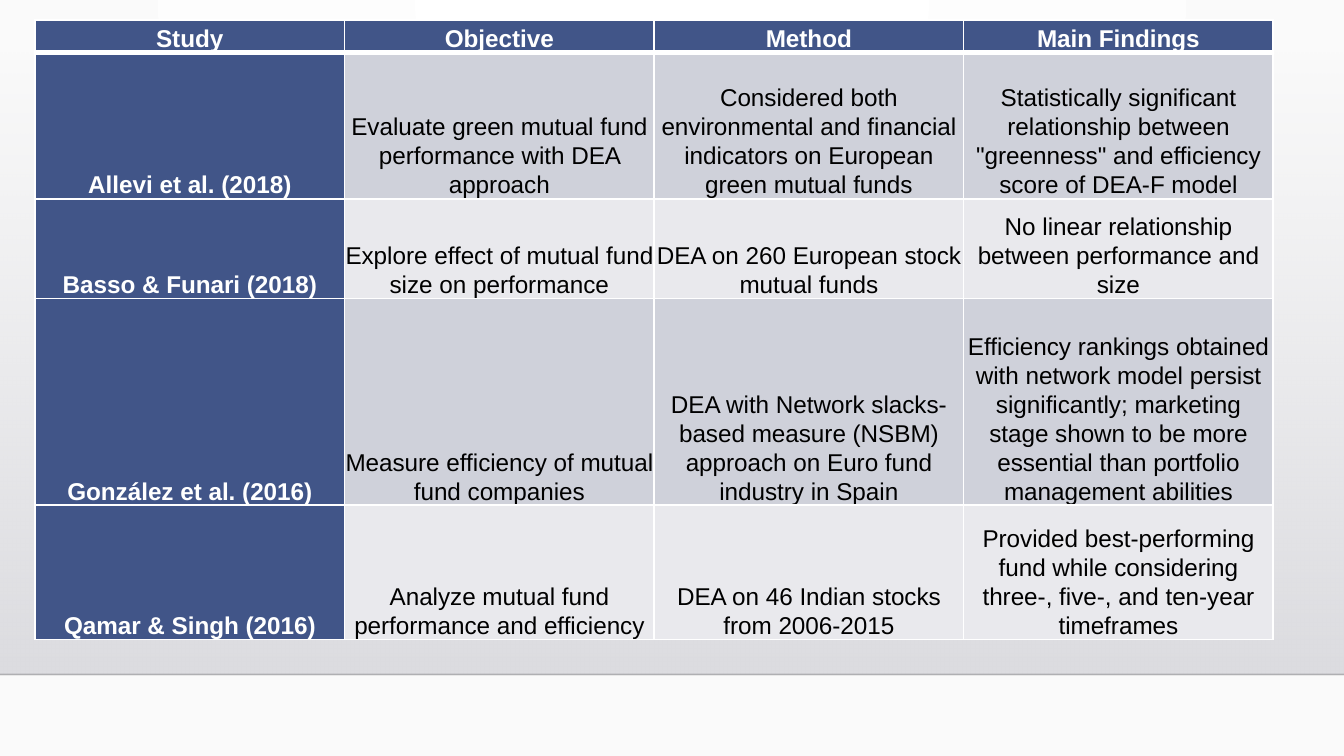
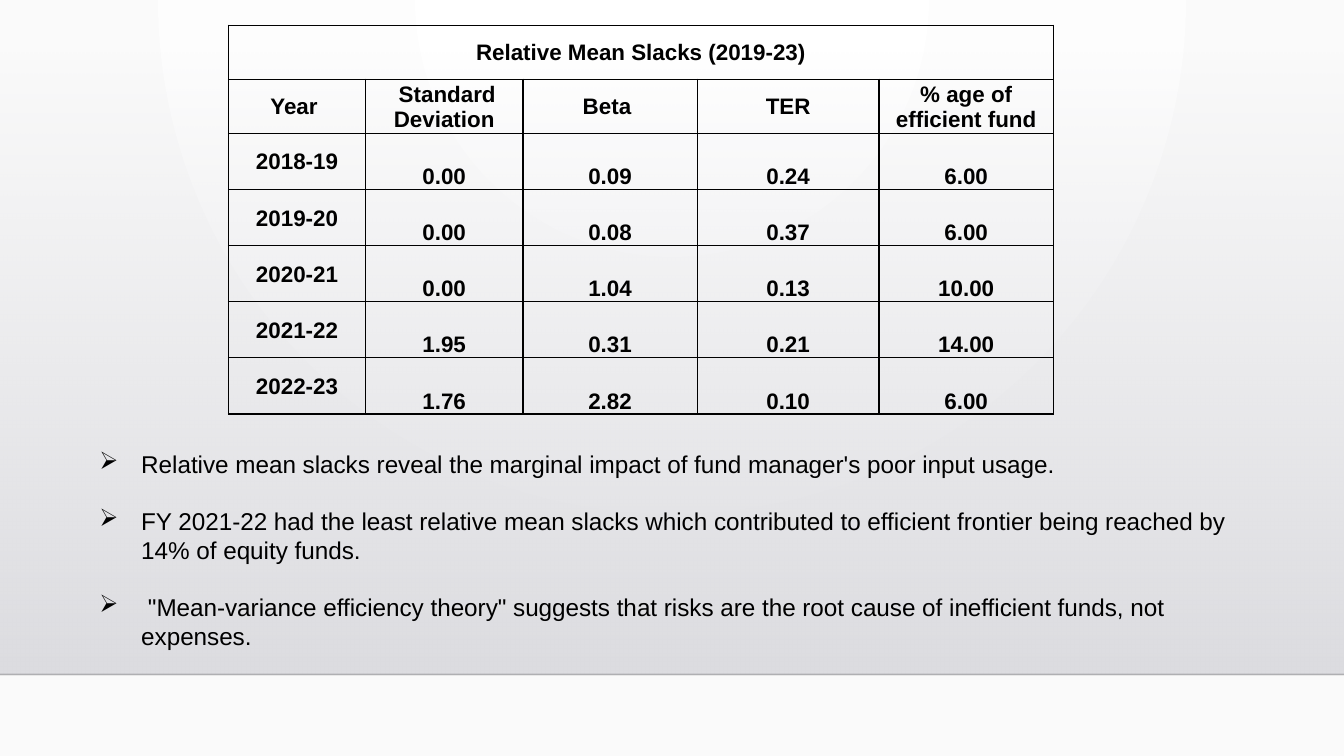
from lxml import etree
from pptx import Presentation
from pptx import util as u
from pptx.dml.color import RGBColor
from pptx.enum import shapes, text
from pptx.oxml import parse_xml
from pptx.oxml.ns import nsdecls, qn

FONT = "Arial"
COLORS = {
    "white": "FFFFFF", "black": "000000", "paper": "FAFAFA",
    "band_top": "DCDCE0", "band_bottom": "DEDEE2", "rule": "000001",
    "navy": "415588", "row_dark": "CFD1DA", "row_light": "E9E9ED",
}
WIDTH, HEIGHT = 25.4, 14.29
BAND_TOP, RULE_Y = 0.97, 12.75

STUDIES = [
    ("Study", "Objective", "Method", "Main Findings"),
    ("Allevi et al. (2018)",
     "Evaluate green mutual fund performance with DEA approach",
     "Considered both environmental and financial indicators on European green mutual funds",
     'Statistically significant relationship between "greenness" and efficiency score of DEA-F model'),
    ("Basso & Funari (2018)",
     "Explore effect of mutual fund size on performance",
     "DEA on 260 European stock mutual funds",
     "No linear relationship between performance and size"),
    ("González et al. (2016)",
     "Measure efficiency of mutual fund companies",
     "DEA with Network slacks-based measure (NSBM) approach on Euro fund industry in Spain",
     "Efficiency rankings obtained with network model persist significantly; "
     "marketing stage shown to be more essential than portfolio management abilities"),
    ("Qamar & Singh (2016)",
     "Analyze mutual fund performance and efficiency",
     "DEA on 46 Indian stocks from 2006-2015",
     "Provided best-performing fund while considering three-, five-, and ten-year timeframes"),
]
STUDY_COLS = [5.85] * 4
STUDY_ROWS = [0.61, 2.77, 1.88, 3.91, 2.54]

SLACKS = [
    ("Relative Mean Slacks (2019-23)", "", "", "", ""),
    ("Year ", " Standard Deviation", "Beta ", "TER", "% age of efficient fund"),
    ("2018-19", "0.00", "0.09", "0.24", "6.00"),
    ("2019-20", "0.00", "0.08", "0.37", "6.00"),
    ("2020-21", "0.00", "1.04", "0.13", "10.00"),
    ("2021-22", "1.95", "0.31", "0.21", "14.00"),
    ("2022-23", "1.76", "2.82", "0.10", "6.00"),
]
SLACK_COLS = [2.59, 2.97, 3.3, 3.43, 3.3]
SLACK_ROWS = [1.02] * 2 + [1.06] * 5

REMARKS = [
    "Relative mean slacks reveal the marginal impact of fund manager's poor input usage.",
    "FY 2021-22 had the least relative mean slacks which contributed to efficient frontier "
    "being reached by 14% of equity funds.",
    ' "Mean-variance efficiency theory" suggests that risks are the root cause of '
    "inefficient funds, not expenses.",
]


def rgb(name):
    return RGBColor.from_string(COLORS[name])


def set_gradient(element, stops, direction):
    gs = "".join(
        f'<a:gs pos="{pos * 1000}"><a:srgbClr val="{COLORS[name]}">'
        f'<a:alpha val="{alpha * 1000}"/></a:srgbClr></a:gs>'
        for pos, name, alpha in stops)
    grad = parse_xml(f'<a:gradFill {nsdecls("a")} rotWithShape="1">'
                     f"<a:gsLst>{gs}</a:gsLst>{direction}</a:gradFill>")
    old = element.find(".//" + qn("a:gradFill"))
    old.getparent().replace(old, grad)


def set_background(master):
    master.background.fill.gradient()
    set_gradient(master.element, [(0, "white", 100), (100, "paper", 100)],
                 '<a:path path="circle"><a:fillToRect l="43000" t="0" '
                 'r="43000" b="100000"/></a:path>')


def new_slide(prs):
    s = prs.slides.add_slide(prs.slide_layouts[6])
    sp = s.shapes.add_shape(shapes.MSO_SHAPE.RECTANGLE, 0, u.Cm(BAND_TOP),
                            u.Cm(WIDTH), u.Cm(RULE_Y - BAND_TOP))
    sp.shadow.inherit = False
    sp.line.fill.background()
    sp.fill.gradient()
    set_gradient(sp.element, [(0, "band_top", 0), (100, "band_bottom", 100)],
                 '<a:lin ang="5400000" scaled="0"/>')
    rule = s.shapes.add_connector(shapes.MSO_CONNECTOR.STRAIGHT, 0, u.Cm(RULE_Y),
                                  u.Cm(WIDTH), u.Cm(RULE_Y))
    rule.line.width = u.Pt(1)
    rule.line.color.rgb = rgb("rule")
    color = rule.element.spPr.find(".//" + qn("a:srgbClr"))
    etree.SubElement(color, qn("a:alpha")).set("val", "20000")
    etree.SubElement(rule.element.spPr, qn("a:effectLst"))
    return s


def style_run(r, size, color, bold=False):
    r.font.name, r.font.size, r.font.bold = FONT, u.Pt(size), bold
    r.font.color.rgb = rgb(color)


def set_borders(cell, color, top=1, bottom=1):
    tc_pr = cell._tc.get_or_add_tcPr()
    for i, (side, width) in enumerate((("L", 1), ("R", 1), ("T", top), ("B", bottom))):
        tc_pr.insert(i, parse_xml(
            f'<a:ln{side} {nsdecls("a")} w="{u.Pt(width)}"><a:solidFill>'
            f'<a:srgbClr val="{COLORS[color]}"/></a:solidFill></a:ln{side}>'))


def add_grid(s, left, top, cols, rows, data, style):
    table = s.shapes.add_table(len(rows), len(cols), u.Cm(left), u.Cm(top),
                               u.Cm(sum(cols)), u.Cm(sum(rows))).table
    table.first_row = table.horz_banding = False
    for col, width in zip(table.columns, cols):
        col.width = u.Cm(width)
    for i, (row, height) in enumerate(zip(table.rows, rows)):
        row.height = u.Cm(height)
        for j, cell in enumerate(row.cells):
            cell.text = data[i][j]
            style(cell, i, j)
    return table


def style_cell(cell, size, color, bold, anchor, inset, spacing=None):
    cell.vertical_anchor = anchor
    cell.margin_left = cell.margin_right = cell.margin_top = u.Cm(inset)
    cell.margin_bottom = 0
    p = cell.text_frame.paragraphs[0]
    p.alignment = text.PP_ALIGN.CENTER
    p.line_spacing = spacing
    for r in p.runs:
        style_run(r, size, color, bold)


def style_study(cell, i, j):
    head = i == 0 or j == 0
    style_cell(cell, 13, "white" if head else "black", head,
               text.MSO_ANCHOR.BOTTOM, 0, 1.07)
    cell.fill.solid()
    cell.fill.fore_color.rgb = rgb("navy" if head else "row_dark" if i % 2 else "row_light")
    set_borders(cell, "white", top=3 if i == 1 else 1, bottom=3 if i == 0 else 1)


def style_slack(cell, i, j):
    anchor = text.MSO_ANCHOR.BOTTOM if i > 1 and j > 0 else text.MSO_ANCHOR.MIDDLE
    style_cell(cell, 12, "black", True, anchor, 0.03)
    cell.fill.background()
    set_borders(cell, "black")


def add_remarks(s):
    tf = s.shapes.add_textbox(u.Cm(1.63), u.Cm(8.36), u.Cm(22.68), u.Cm(5.26)).text_frame
    tf.word_wrap = True
    for i, remark in enumerate(REMARKS):
        p = tf.add_paragraph() if i else tf.paragraphs[0]
        p_pr = p._p.get_or_add_pPr()
        p_pr.set("marL", str(u.Cm(0.79)))
        p_pr.set("indent", str(-u.Cm(0.79)))
        etree.SubElement(p_pr, qn("a:buChar")).set("char", "➢")
        p.text = remark
        if i:
            p.space_before = u.Pt(15)
        style_run(p.runs[0], 13, "black")


def main():
    prs = Presentation()
    prs.slide_width, prs.slide_height = u.Cm(WIDTH), u.Cm(HEIGHT)
    set_background(prs.slide_master)

    add_grid(new_slide(prs), 0.66, 0.38, STUDY_COLS, STUDY_ROWS, STUDIES, style_study)

    s = new_slide(prs)
    table = add_grid(s, 4.32, 0.48, SLACK_COLS, SLACK_ROWS, SLACKS, style_slack)
    table.cell(0, 0).merge(table.cell(0, len(SLACK_COLS) - 1))
    add_remarks(s)

    prs.save("out.pptx")


if __name__ == "__main__":
    main()
